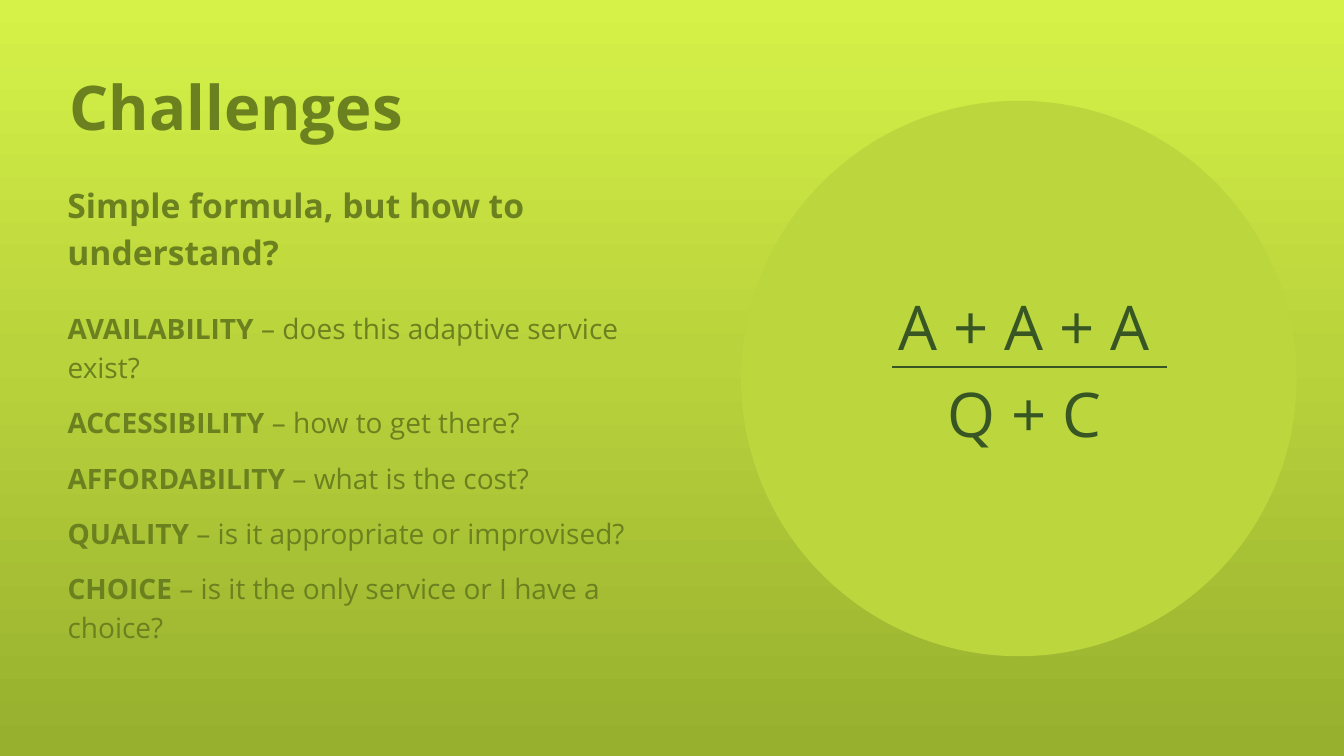
from copy import deepcopy

from pptx import Presentation
from pptx.dml.color import RGBColor
from pptx.enum.shapes import MSO_CONNECTOR, MSO_SHAPE
from pptx.enum.text import MSO_ANCHOR, MSO_AUTO_SIZE, PP_ALIGN
from pptx.oxml.ns import qn
from pptx.util import Inches, Pt

LEFT, CENTER = PP_ALIGN.LEFT, PP_ALIGN.CENTER
COLORS = {"olive": "6B801F", "forest": "385623", "circle": "BCD63E",
          "top": "D6F248", "middle": "B9D33C", "bottom": "97B02E"}
FONT = "Open Sans"
TITLE_AT = (0.59, 0.63, 12.01, 1.49)
QUESTION_AT = (0.45, 1.73, 5.72, 1)
CHALLENGES_AT = (0.45, 2.99, 6.52, 3.07)
QUESTION = "Simple formula, but how to understand?"
CHALLENGES = [
    ("AVAILABILITY", " – does this adaptive service exist?"),
    ("ACCESSIBILITY", " – how to get there?"),
    ("AFFORDABILITY", " – what is the cost?"),
    ("QUALITY", " – is it appropriate or improvised?"),
    ("CHOICE", " – is it the only service or I have a choice?"),
]
FORMULA = [("A + A + A", (8.58, 2.82, 3.16, 0.84)),
           ("Q + C", (9.26, 3.68, 1.8, 0.84))]
BODY_FORMAT = {"alignment": LEFT, "line_spacing": 1.15,
               "space_before": Pt(0), "space_after": Pt(12)}
PLAIN_FORMAT = {"alignment": LEFT, "line_spacing": 1.0, "space_before": Pt(0)}


def prepare_frame(shape, at):
    """Place a text shape, with wrapped text that starts at the top."""
    shape.left, shape.top, shape.width, shape.height = map(Inches, at)
    frame = shape.text_frame
    frame.word_wrap = True
    frame.auto_size = MSO_AUTO_SIZE.NONE
    frame.vertical_anchor = MSO_ANCHOR.TOP
    return frame


def write_paragraph(para, spans, size, color, settings):
    """Fill a paragraph with (text, bold) spans."""
    if settings is BODY_FORMAT:
        props = para._p.get_or_add_pPr()
        props.set("marL", str(Inches(0.12)))
        props.set("indent", "0")
        props.append(props.makeelement(qn("a:buNone"), {}))
    for name, value in settings.items():
        setattr(para, name, value)
    for text, bold in spans:
        span = para.add_run()
        span.text = text
        for name, value in {"name": FONT, "size": Pt(size), "bold": bold}.items():
            setattr(span.font, name, value)
        span.font.color.rgb = RGBColor.from_string(COLORS[color])


deck = Presentation()
deck.slide_width, deck.slide_height = Inches(13.33), Inches(7.5)
page = deck.slides.add_slide(deck.slide_layouts[1])

# Background
backdrop = page.background.fill
backdrop.gradient()
backdrop.gradient_angle = 270
stop_list = page.element.find(".//" + qn("a:gsLst"))
stop_list.append(deepcopy(stop_list[-1]))
for stop, (color, position) in zip(
        backdrop.gradient_stops, [("top", 0), ("middle", 0.47), ("bottom", 0.99)]):
    stop.color.rgb = RGBColor.from_string(COLORS[color])
    stop.position = position

# Title and question
frame = prepare_frame(page.shapes.title, TITLE_AT)
write_paragraph(frame.paragraphs[0], [("Challenges", True)], 44, "olive", PLAIN_FORMAT)

question_box = page.shapes.add_textbox(*map(Inches, QUESTION_AT))
frame = prepare_frame(question_box, QUESTION_AT)
write_paragraph(frame.paragraphs[0], [(QUESTION, True)], 24, "olive", BODY_FORMAT)

# List of challenges
frame = prepare_frame(page.placeholders[1], CHALLENGES_AT)
for index, (term, meaning) in enumerate(CHALLENGES):
    para = frame.add_paragraph() if index else frame.paragraphs[0]
    write_paragraph(para, [(term, True), (meaning, False)], 20, "olive", BODY_FORMAT)

# Formula in its circle
circle = page.shapes.add_shape(
    MSO_SHAPE.OVAL, Inches(7.35), Inches(1), Inches(5.51), Inches(5.51))
circle.shadow.inherit = False
circle.fill.solid()
circle.fill.fore_color.rgb = RGBColor.from_string(COLORS["circle"])
circle.line.fill.background()

for text, at in FORMULA:
    frame = prepare_frame(page.shapes.add_textbox(*map(Inches, at)), at)
    write_paragraph(frame.paragraphs[0], [(text, False)], 44, "forest",
                    {**PLAIN_FORMAT, "alignment": CENTER})

fraction_bar = page.shapes.add_connector(
    MSO_CONNECTOR.STRAIGHT, Inches(8.85), Inches(3.64), Inches(11.57), Inches(3.64))
fraction_bar.line.color.rgb = RGBColor.from_string(COLORS["forest"])
fraction_bar.line.width = Pt(1.5)
bar_props = fraction_bar._element.spPr
bar_props.append(bar_props.makeelement(qn("a:effectLst"), {}))

deck.save("out.pptx")
